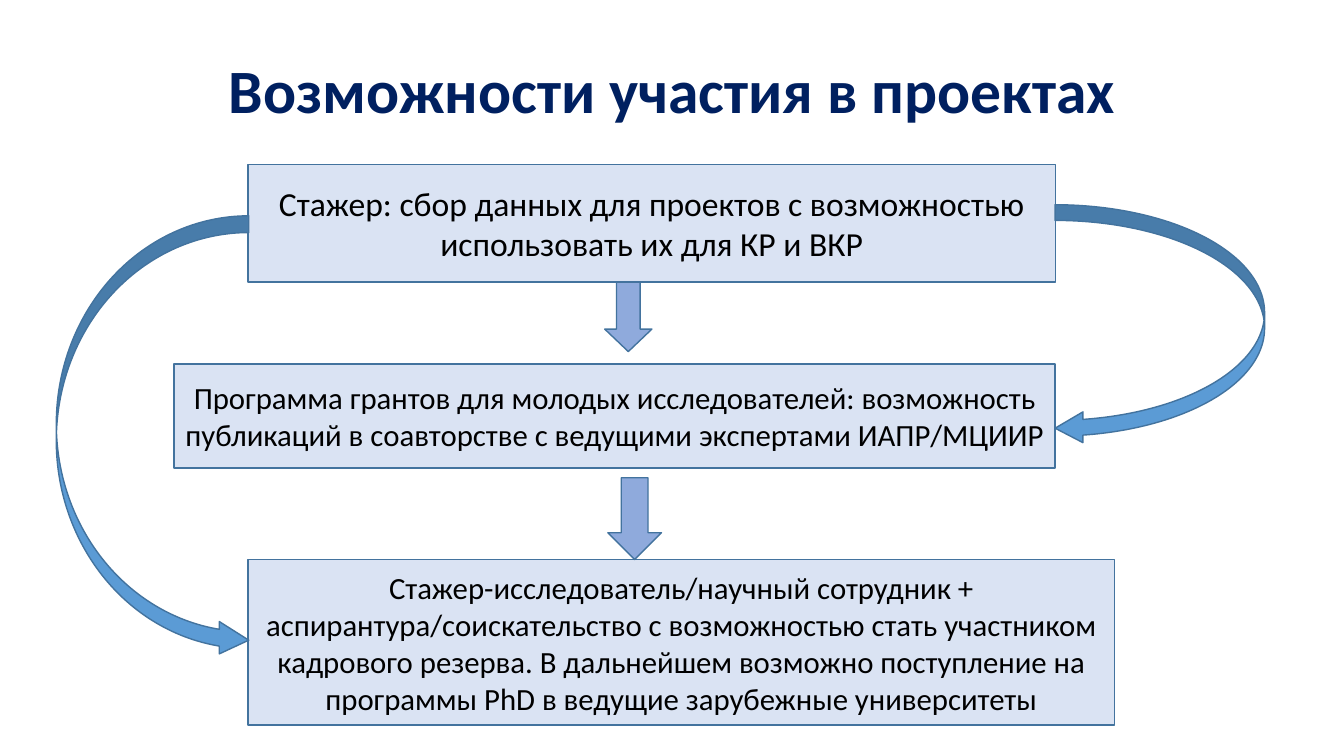
from pptx import Presentation
from pptx.dml.color import RGBColor
from pptx.enum.shapes import MSO_SHAPE
from pptx.enum.text import MSO_ANCHOR, PP_ALIGN
from pptx.util import Cm, Pt

NAVY = RGBColor(0x00, 0x20, 0x60)
BLACK = RGBColor(0x00, 0x00, 0x00)
PALE_BLUE = RGBColor(0xDA, 0xE3, 0xF3)
SOFT_BLUE = RGBColor(0x8F, 0xAA, 0xDC)
BLUE = RGBColor(0x5B, 0x9B, 0xD5)
OUTLINE = RGBColor(0x43, 0x73, 0x9E)
FONT = "Calibri"

STAGES = [
    ((4.83, 0, 20.35, 2.97), 24,
     "Стажер: сбор данных для проектов с возможностью использовать их для КР и ВКР"),
    ((2.97, 5.03, 22.2, 2.62), 22,
     "Программа грантов для молодых исследователей: возможность публикаций "
     "в соавторстве с ведущими экспертами ИАПР/МЦИИР"),
    ((4.83, 9.96, 21.84, 4.17), 22,
     "Стажер-исследователь/научный сотрудник + аспирантура/соискательство "
     "с возможностью стать участником кадрового резерва. В дальнейшем возможно "
     "поступление на программы PhD в ведущие зарубежные университеты"),
]
STEPS = [
    (MSO_SHAPE.DOWN_ARROW, (13.82, 2.97, 1.19, 1.75), SOFT_BLUE, (0.5, 0.476)),
    (MSO_SHAPE.DOWN_ARROW, (13.9, 7.9, 1.35, 2.06), SOFT_BLUE, (0.5, 0.5)),
    (MSO_SHAPE.CURVED_RIGHT_ARROW, (0, 1.3, 4.85, 11.1), BLUE, (0.087, 0.168, 0.153)),
    (MSO_SHAPE.CURVED_LEFT_ARROW, (25.17, 1.02, 5.28, 6.02), BLUE, (0.075, 0.147, 0.133)),
]


def write(frame, text, size, color, bold=False):
    frame.word_wrap = True
    frame.vertical_anchor = MSO_ANCHOR.MIDDLE
    paragraph = frame.paragraphs[0]
    paragraph.alignment = PP_ALIGN.CENTER
    run = paragraph.add_run()
    run.text = text
    run.font.name = FONT
    run.font.size = Pt(size)
    run.font.bold = bold
    run.font.color.rgb = color
    return paragraph


def add_outlined(slide, kind, origin, box, fill):
    left, top, width, height = box
    part = slide.shapes.add_shape(
        kind, Cm(origin[0] + left), Cm(origin[1] + top), Cm(width), Cm(height))
    part.shadow.inherit = False
    part.fill.solid()
    part.fill.fore_color.rgb = fill
    part.line.color.rgb = OUTLINE
    part.line.width = Pt(1)
    return part


def place_heading(slide, left, top, width, height):
    heading = slide.shapes.title
    heading.left, heading.top = Cm(left), Cm(top)
    heading.width, heading.height = Cm(width), Cm(height)
    paragraph = write(heading.text_frame, "Возможности участия в проектах", 44, NAVY, True)
    paragraph.line_spacing = 0.9


def place_career_path(slide, left, top):
    origin = left, top
    for box, size, text in STAGES:
        stage = add_outlined(slide, MSO_SHAPE.RECTANGLE, origin, box, PALE_BLUE)
        write(stage.text_frame, text, size, BLACK)
    for kind, box, fill, proportions in STEPS:
        step = add_outlined(slide, kind, origin, box, fill)
        for index, proportion in enumerate(proportions):
            step.adjustments[index] = proportion


def main():
    deck = Presentation()
    deck.slide_width, deck.slide_height = Cm(33.87), Cm(19.05)
    slide = deck.slides.add_slide(deck.slide_layouts[5])
    place_heading(slide, 2.34, 1.02, 29.21, 2.67)
    place_career_path(slide, 1.42, 4.14)
    deck.save("out.pptx")


if __name__ == "__main__":
    main()
